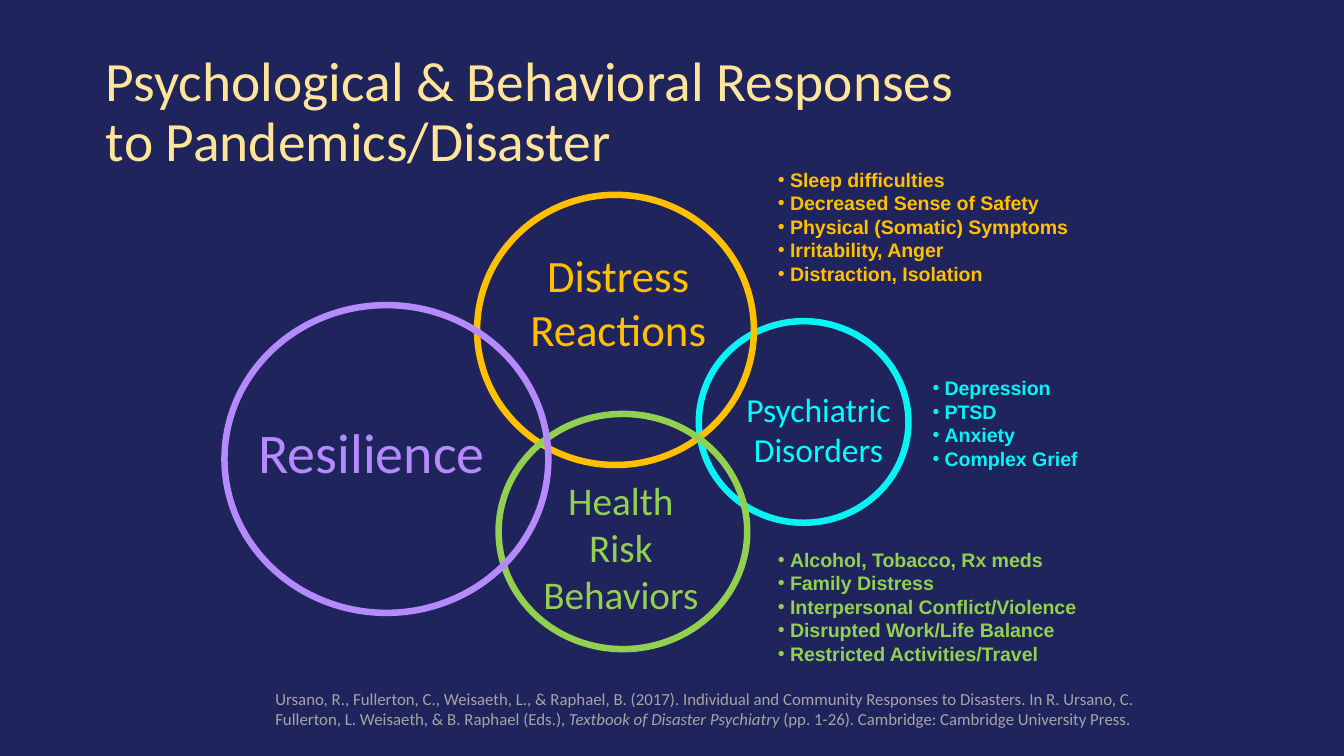
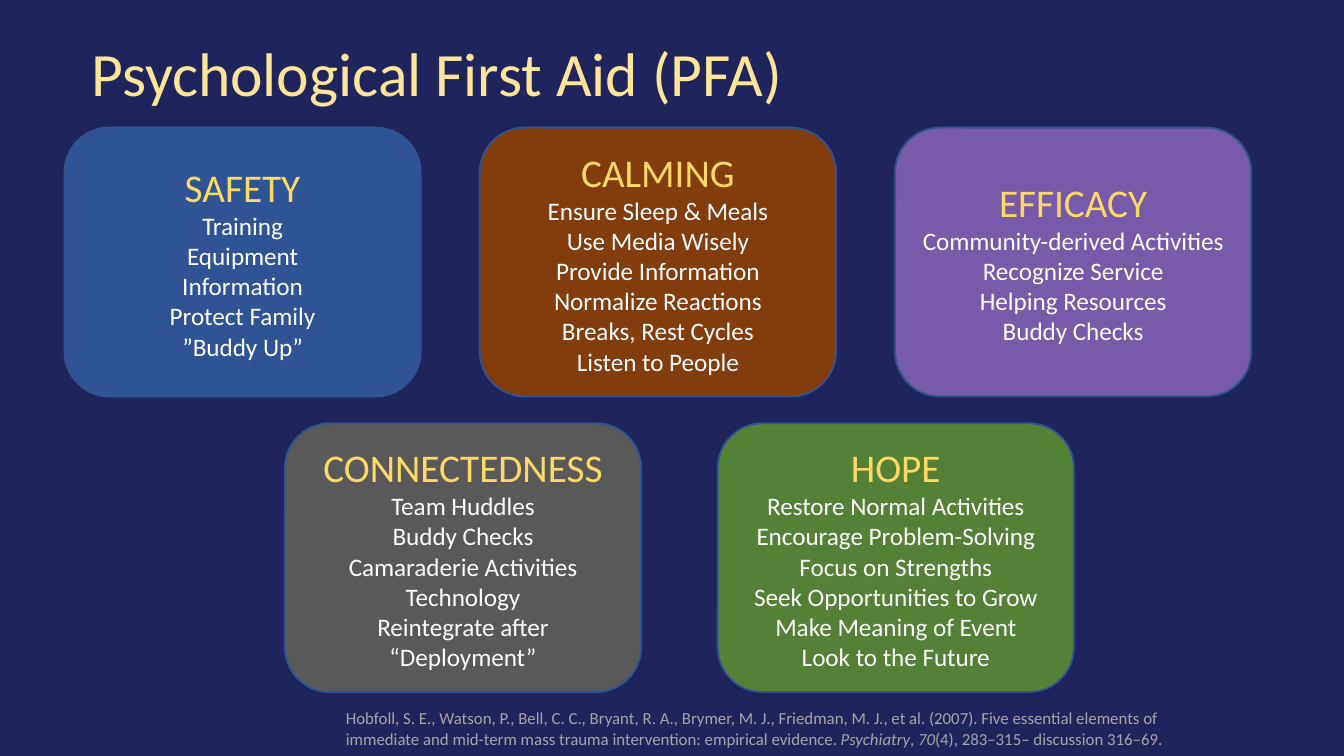
from lxml import etree
from pptx import Presentation
from pptx.dml.color import RGBColor
from pptx.enum.shapes import MSO_SHAPE
from pptx.enum.text import MSO_ANCHOR, PP_ALIGN
from pptx.oxml.ns import qn
from pptx.util import Inches, Pt

OVAL, CARD = MSO_SHAPE.OVAL, MSO_SHAPE.ROUNDED_RECTANGLE
LEFT, CENTER = PP_ALIGN.LEFT, PP_ALIGN.CENTER
TOP, MIDDLE = MSO_ANCHOR.TOP, MSO_ANCHOR.MIDDLE

NAVY, CREAM, GREY, WHITE = "20245D", "FEE599", "A5A5A5", "FFFFFF"
CYAN, AMBER, LIME, VIOLET = "08F4F4", "FFC000", "92D050", "B48AFD"
GOLD, CARD_EDGE = "FFD966", "31538F"

GRID = Inches(0.1)  # columns and rows are a tenth of an inch
BULLET_INDENT = Inches(0.09)


def rgb(color):
    return RGBColor.from_string(color)


def add_item(s, box, lines=(), size=9, color=WHITE, align=LEFT, anchor=TOP,
             font="Calibri", shape=None, fill=None, line=None, weight=1):
    """Add a text box, or a preset shape, with one paragraph per line."""
    area = [int(GRID * v) for v in box]
    if shape is None:
        sp = s.shapes.add_textbox(*area)
    else:
        sp = s.shapes.add_shape(shape, *area)
        sp.shadow.inherit = False
        sp.line.color.rgb = rgb(line)
        sp.line.width = Pt(weight)
        if fill:
            sp.fill.solid()
            sp.fill.fore_color.rgb = rgb(fill)
        else:
            sp.fill.background()
    tf = sp.text_frame
    tf.word_wrap = True
    tf.vertical_anchor = anchor
    for i, text in enumerate(lines):
        p = tf.add_paragraph() if i else tf.paragraphs[0]
        p.text = text
        p.alignment = align
        p.font.name, p.font.size = font, Pt(size)
        p.font.color.rgb = rgb(color)
    return tf


prs = Presentation()
prs.slide_width = Inches(10)
prs.slide_height = prs.slide_width * 9 // 16

# Titles and references: text, size, left, top; reference runs alternate
# between upright and italic
frames = [
    (("Psychological & Behavioral Responses \vto Pandemics/Disaster", 29.7, 6.9, 3),
     (19.5, 50.75, 66.5, 4),
     ["Ursano, R., Fullerton, C., Weisaeth, L., & Raphael, B. (2017). Individual and "
      "Community Responses to Disasters. In R. Ursano, C. Fullerton, L. Weisaeth, & "
      "B. Raphael (Eds.), ", "Textbook of Disaster Psychiatry",
      " (pp. 1-26). Cambridge: Cambridge University Press."]),
    (("Psychological First Aid (PFA)", 33, 5.8, 0.25),
     (24.75, 52.2, 64.3, 4),
     ["Hobfoll, S. E., Watson, P., Bell, C. C., Bryant, R. A., Brymer, M. J., Friedman, "
      "M. J., et al. (2007). Five essential elements of immediate and mid-term mass "
      "trauma intervention: empirical evidence. ", "Psychiatry", ", ", "70",
      "(4), 283–315– discussion 316–69."]),
]
slides = []
for (title, size, left, top), ref_box, ref_runs in frames:
    s = prs.slides.add_slide(prs.slide_layouts[6])
    s.background.fill.solid()
    s.background.fill.fore_color.rgb = rgb(NAVY)
    tf = add_item(s, (left, top, 86.2, 10.9), [title], size, CREAM, anchor=MIDDLE)
    tf.paragraphs[0].line_spacing = 0.9
    p = add_item(s, ref_box, [""], 9, GREY).paragraphs[0]
    for i, text in enumerate(ref_runs):
        r = p.add_run()
        r.text = text
        r.font.italic = i % 2 == 1
    slides.append(s)
responses_slide, first_aid_slide = slides

# Slide 1: overlapping circles with labels and bullet lists
# colour, circle, label lines, label size, label box, list box, list items
responses = [
    (CYAN, (52, 23.9, 15.6, 15), ["Psychiatric Disorders"], 18,
     (53.4, 28.45, 15, 7.1), (68.4, 27.5, 16.9, 8.1),
     ["Depression", "PTSD", "Anxiety", "Complex Grief"]),
    (AMBER, (35.5, 14.5, 20.6, 20.1), ["Distress Reactions"], 24,
     (36.6, 17.95, 18.8, 9.1), (56.9, 12, 28.1, 9.8),
     ["Sleep difficulties", "Decreased Sense of Safety",
      "Physical (Somatic) Symptoms", "Irritability, Anger", "Distraction, Isolation"]),
    (LIME, (37.1, 30.8, 18.5, 17.5), ["Health", "Risk", "Behaviors"], 21,
     (36.8, 34.95, 18.8, 11.6), (56.9, 40.25, 28.3, 9.8),
     ["Alcohol, Tobacco, Rx meds", "Family Distress", "Interpersonal Conflict/Violence",
      "Disrupted Work/Life Balance", "Restricted Activities/Travel"]),
    (VIOLET, (16.7, 22.7, 24.1, 22.9), ["Resilience"], 30,
     (17.2, 30.6, 20.9, 6.1), None, []),
]
for color, circle, label, size, label_box, list_box, items in responses:
    add_item(responses_slide, circle, shape=OVAL, line=color, weight=3.5)
    label_color = "00FFFF" if color == CYAN else color
    add_item(responses_slide, label_box, label, size, label_color, CENTER)
    if not items:
        continue
    tf = add_item(responses_slide, list_box, items, 10.5, color, font="Arial")
    for p in tf.paragraphs:
        p.font.bold = True
        pPr = p._p.get_or_add_pPr()
        pPr.set("marL", str(BULLET_INDENT))
        pPr.set("indent", str(-BULLET_INDENT))
        bullet_color = etree.Element(qn("a:buClr"))
        etree.SubElement(bullet_color, qn("a:srgbClr"), val=color)
        bullet_font = etree.Element(qn("a:buFont"), typeface="Arial")
        bullet = etree.Element(qn("a:buChar"), char="•")
        for i, part in enumerate((bullet_color, bullet_font, bullet)):
            pPr.insert(i, part)

# Slide 2: rows of cards
CARD_W, CARD_H = 26.5, 20
# top, first left, column step, cards of the row
card_rows = [
    (9.5, 4.8, 30.9, [
        ("2F5496", ["SAFETY", "Training", "Equipment", "Information", "Protect Family",
                    "”Buddy Up”"]),
        ("833C0B", ["CALMING", "Ensure Sleep & Meals", "Use Media Wisely",
                    "Provide Information", "Normalize Reactions", "Breaks, Rest Cycles",
                    "Listen to People"]),
        ("775AAA", ["EFFICACY", "Community-derived Activities", "Recognize Service",
                    "Helping Resources", "Buddy Checks"]),
    ]),
    (31.5, 21.2, 32.2, [
        ("595959", ["CONNECTEDNESS", "Team Huddles", "Buddy Checks",
                    "Camaraderie Activities", "Technology",
                    "Reintegrate after “Deployment”"]),
        ("548135", ["HOPE", "Restore Normal Activities", "Encourage Problem-Solving",
                    "Focus on Strengths", "Seek Opportunities to Grow",
                    "Make Meaning of Event", "Look to the Future"]),
    ]),
]
for top, left, step, cards in card_rows:
    for col, (fill, lines) in enumerate(cards):
        tf = add_item(first_aid_slide, (left + col * step, top, CARD_W, CARD_H), lines,
                      13.5, WHITE, CENTER, MIDDLE, shape=CARD, fill=fill, line=CARD_EDGE)
        heading = tf.paragraphs[0].font
        heading.size = Pt(21)
        heading.color.rgb = rgb(GOLD)

prs.save("out.pptx")
